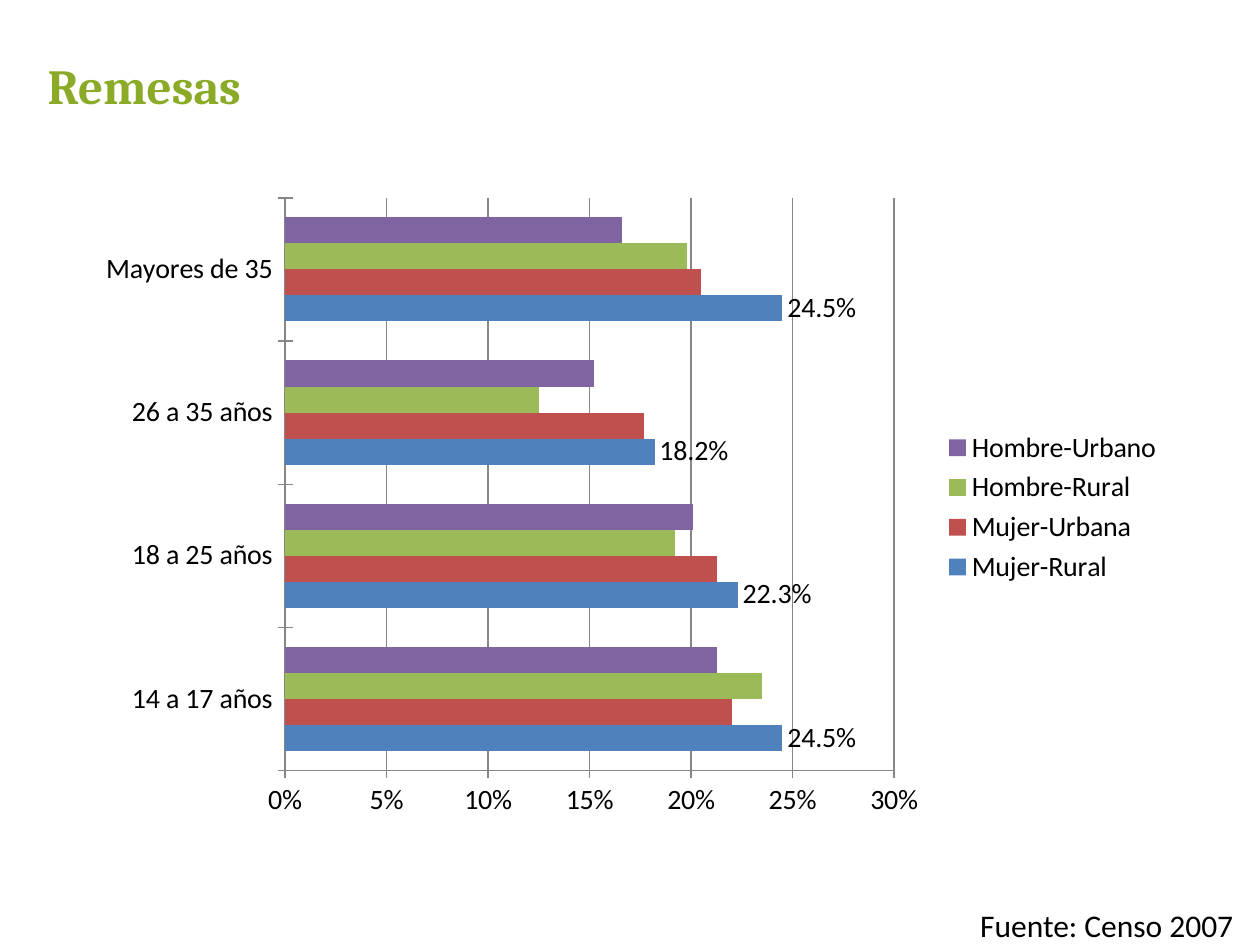
import pptx
import pptx.chart.data
import pptx.dml.color
import pptx.enum.chart
import pptx.enum.text
import pptx.util
from dataclasses import dataclass

Cm = pptx.util.Cm
Pt = pptx.util.Pt


@dataclass(frozen=True)
class Theme:
    green: str = "8BAA27"
    black: str = "000000"
    gray: str = "868686"
    head: str = "Cambria"
    body: str = "Calibri"
    big: int = 28
    mid: int = 18
    small: int = 16


THEME = Theme()

AGES = ["14 a 17 años", "18 a 25 años", "26 a 35 años", "Mayores de 35"]
# Name, bar colour, share per age group
GROUPS = [
    ("Mujer-Rural", "4F81BD", (0.245, 0.223, 0.182, 0.245)),
    ("Mujer-Urbana", "C0504D", (0.22, 0.213, 0.177, 0.205)),
    ("Hombre-Rural", "9BBB59", (0.235, 0.192, 0.125, 0.198)),
    ("Hombre-Urbano", "8064A2", (0.213, 0.201, 0.152, 0.166)),
]


def rgb(code):
    return pptx.dml.color.RGBColor.from_string(code)


def style(font, face, size, color, bold=False):
    font.name = face
    font.size = Pt(size)
    font.color.rgb = rgb(color)
    font.bold = bold


def add_text(slide, box, text, wrap):
    frame = slide.shapes.add_textbox(*map(Cm, box)).text_frame
    frame.word_wrap = wrap
    frame.auto_size = pptx.enum.text.MSO_AUTO_SIZE.SHAPE_TO_FIT_TEXT
    frame.text = text
    return frame.paragraphs[0]


def add_title(slide, box):
    para = add_text(slide, box, "Remesas", False)
    para.line_spacing = 0.9
    style(para.runs[0].font, THEME.head, THEME.big, THEME.green, True)


def add_source(slide, box):
    para = add_text(slide, box, "Fuente: Censo 2007", True)
    style(para.runs[0].font, THEME.body, THEME.mid, THEME.black)


def add_bars(slide, box):
    kinds = pptx.enum.chart
    data = pptx.chart.data.CategoryChartData(number_format="0.0%")
    data.categories = AGES
    for name, _, shares in GROUPS:
        data.add_series(name, shares)
    chart = slide.shapes.add_chart(
        kinds.XL_CHART_TYPE.BAR_CLUSTERED, *map(Cm, box), data
    ).chart
    style(chart.font, THEME.body, THEME.small, THEME.black)
    chart.has_title = False

    # Bars
    plot = chart.plots[0]
    plot.vary_by_categories = False
    plot.gap_width = 150
    plot.overlap = 0
    for bars, (_, color, _) in zip(plot.series, GROUPS):
        bars.format.fill.solid()
        bars.format.fill.fore_color.rgb = rgb(color)

    # Values on the rural women only
    labels = plot.series[0].data_labels
    labels.show_value = True
    labels.number_format = "0.0%"
    labels.number_format_is_linked = False

    # Axes and grid
    scale = chart.value_axis
    scale.minimum_scale, scale.maximum_scale = 0, 0.3
    scale.major_unit = 0.05
    scale.has_major_gridlines = True
    scale.tick_labels.number_format = "0%"
    scale.tick_labels.number_format_is_linked = False
    for axis in (scale, chart.category_axis):
        axis.major_tick_mark = kinds.XL_TICK_MARK.CROSS
        axis.format.line.color.rgb = rgb(THEME.gray)
    scale.major_gridlines.format.line.color.rgb = rgb(THEME.gray)

    # Legend
    chart.has_legend = True
    chart.legend.position = kinds.XL_LEGEND_POSITION.RIGHT
    chart.legend.include_in_layout = False


def main():
    deck = pptx.Presentation()
    deck.slide_width, deck.slide_height = Cm(25.4), Cm(19.05)
    slide = deck.slides.add_slide(deck.slide_layouts[6])
    add_title(slide, (0.71, 1.12, 4.5, 1.35))
    add_bars(slide, (1.7, 3.73, 22, 13))
    add_source(slide, (19.51, 18.14, 5.89, 1.02))
    deck.save("out.pptx")


if __name__ == "__main__":
    main()
